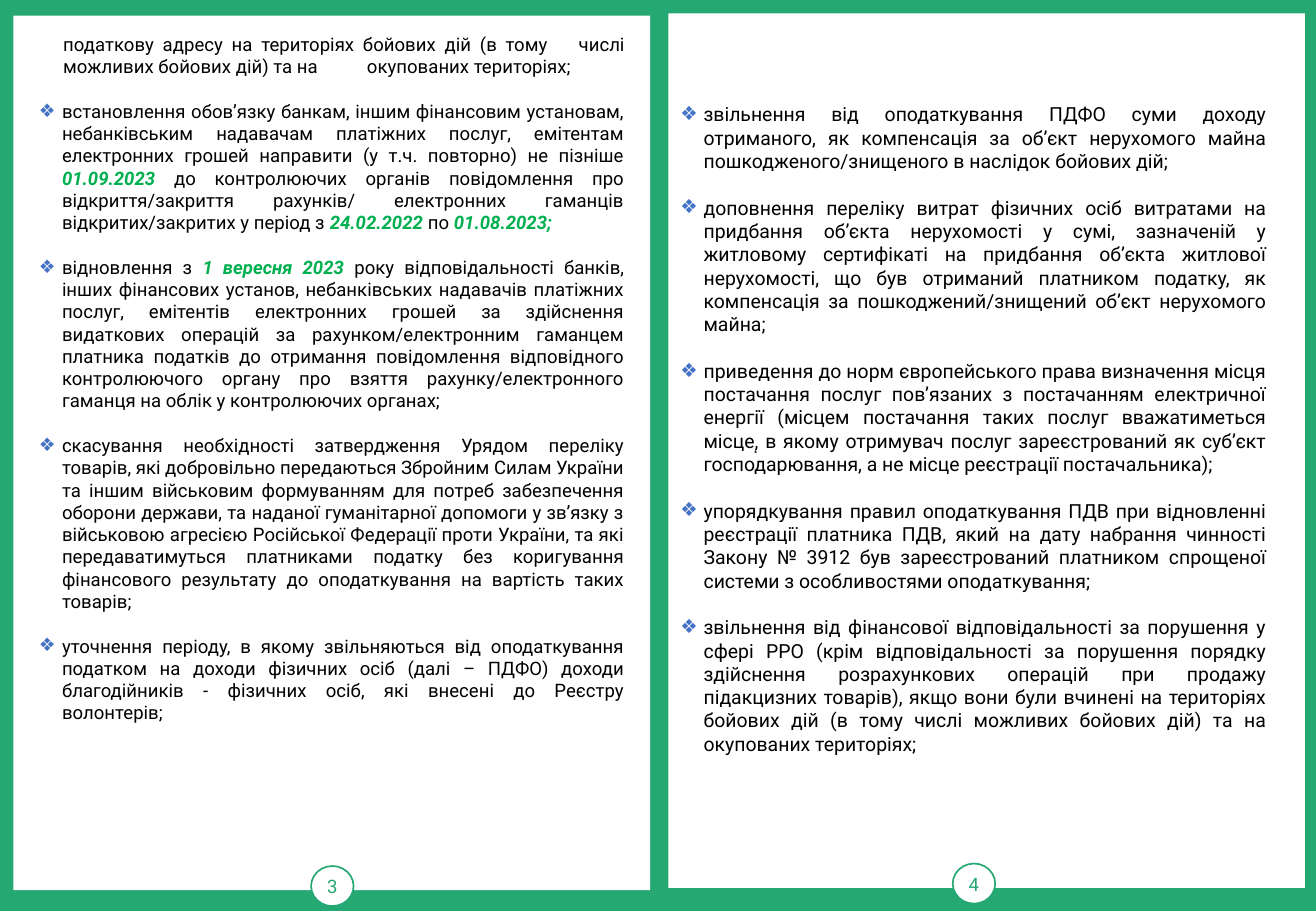
from lxml import etree
from pptx import Presentation
from pptx.dml.color import RGBColor
from pptx.enum.shapes import MSO_SHAPE
from pptx.enum.text import MSO_ANCHOR, MSO_AUTO_SIZE, PP_ALIGN
from pptx.oxml.ns import qn
from pptx.util import Inches, Pt

RECTANGLE, OVAL = MSO_SHAPE.RECTANGLE, MSO_SHAPE.OVAL
TOP, MIDDLE = MSO_ANCHOR.TOP, MSO_ANCHOR.MIDDLE
CENTER, JUSTIFY = PP_ALIGN.CENTER, PP_ALIGN.JUSTIFY
NO_AUTOFIT = MSO_AUTO_SIZE.NONE
GREEN = RGBColor(0x25, 0xA8, 0x72)
DATE_GREEN = RGBColor(0x00, 0xB0, 0x50)
BULLET_BLUE = RGBColor(0x44, 0x72, 0xC4)
WHITE = RGBColor(0xFF, 0xFF, 0xFF)
BLACK = RGBColor(0, 0, 0)
DARK_GREY = RGBColor(0x33, 0x33, 0x33)
FONT = "Roboto"

# Text between asterisks is a highlighted date
LEFT_CONTINUATION = (
    "податкову адресу на територіях бойових дій (в тому\tчислі "
    "можливих бойових дій) та на\tокупованих територіях;")
LEFT_ITEMS = [
    "встановлення обов’язку банкам, іншим фінансовим установам, небанківським "
    "надавачам платіжних послуг, емітентам електронних грошей направити (у т.ч. "
    "повторно) не пізніше *01.09.2023* до контролюючих органів повідомлення про "
    "відкриття/закриття рахунків/ електронних гаманців відкритих/закритих у період "
    "з *24.02.2022* по *01.08.2023;*",
    "відновлення з *1 вересня 2023* року відповідальності банків, інших фінансових "
    "установ, небанківських надавачів платіжних послуг, емітентів електронних грошей "
    "за здійснення видаткових операцій за рахунком/електронним гаманцем платника "
    "податків до отримання повідомлення відповідного контролюючого органу про взяття "
    "рахунку/електронного гаманця на облік у контролюючих органах;",
    "скасування необхідності затвердження Урядом переліку товарів, які добровільно "
    "передаються Збройним Силам України та іншим військовим формуванням для потреб "
    "забезпечення оборони держави, та наданої гуманітарної допомоги у зв’язку з "
    "військовою агресією Російської Федерації проти України, та які передаватимуться "
    "платниками податку без коригування фінансового результату до оподаткування на "
    "вартість таких товарів;",
    "уточнення періоду, в якому звільняються від оподаткування податком на доходи "
    "фізичних осіб (далі – ПДФО) доходи благодійників - фізичних осіб, які внесені "
    "до Реєстру волонтерів;",
]
RIGHT_ITEMS = [
    "звільнення від оподаткування ПДФО суми доходу отриманого, як компенсація за "
    "об’єкт нерухомого майна пошкодженого/знищеного в наслідок бойових дій;",
    "доповнення переліку витрат фізичних осіб витратами на придбання об’єкта "
    "нерухомості у сумі, зазначеній у житловому сертифікаті на придбання об’єкта "
    "житлової нерухомості, що був отриманий платником податку, як компенсація за "
    "пошкоджений/знищений об’єкт нерухомого майна;",
    "приведення до норм європейського права визначення місця постачання послуг "
    "пов’язаних з постачанням електричної енергії (місцем постачання таких послуг "
    "вважатиметься місце, в якому отримувач послуг зареєстрований як суб’єкт "
    "господарювання, а не місце реєстрації постачальника);",
    "упорядкування правил оподаткування ПДВ при відновленні реєстрації платника ПДВ, "
    "який на дату набрання чинності Закону № 3912 був зареєстрований платником "
    "спрощеної системи з особливостями оподаткування;",
    "звільнення від фінансової відповідальності за порушення у сфері РРО (крім "
    "відповідальності за порушення порядку здійснення розрахункових операцій при "
    "продажу підакцизних товарів), якщо вони були вчинені на територіях бойових дій "
    "(в тому числі можливих бойових дій) та на окупованих територіях;",
]


def set_format(target, values):
    """Set attributes from a dict; the colour goes to the font colour."""
    for name, value in values.items():
        if name == "color":
            target.color.rgb = value
        else:
            setattr(target, name, value)


def add_property(paragraph, tag, **attributes):
    """Append one element to the paragraph properties."""
    properties = paragraph._p.get_or_add_pPr()
    return etree.SubElement(properties, qn(tag), attributes)


presentation = Presentation()
presentation.slide_width = Inches(10.83)
presentation.slide_height = Inches(7.5)
slide = presentation.slides.add_slide(presentation.slide_layouts[3])
slide.background.fill.solid()
slide.background.fill.fore_color.rgb = GREEN

# The page has no title
title = slide.shapes.title
title._element.getparent().remove(title._element)
left_list, right_list = slide.placeholders

# White pages with numbered circles
for number, page_left, page_top, circle_left in [
        ("3", 0.11, 0.13, 2.56), ("4", 5.5, 0.11, 7.84)]:
    page = slide.shapes.add_shape(
        RECTANGLE, Inches(page_left), Inches(page_top), Inches(5.24), Inches(7.2))
    circle = slide.shapes.add_shape(
        OVAL, Inches(circle_left), Inches(page_top + 7), Inches(0.35), Inches(0.33))
    for shape in (page, circle):
        shape.shadow.inherit = False
        shape.fill.solid()
        shape.fill.fore_color.rgb = WHITE
    page.line.fill.background()
    circle.line.color.rgb = GREEN
    circle.line.width = Pt(1)
    set_format(circle.text_frame, {
        "margin_left": 0, "margin_right": 0, "margin_top": 0, "margin_bottom": 0,
        "vertical_anchor": MIDDLE, "word_wrap": False})
    paragraph = circle.text_frame.paragraphs[0]
    paragraph.text = number
    paragraph.alignment = CENTER
    set_format(paragraph.font, {"name": FONT, "size": Pt(11), "color": GREEN})

# Small dot on the right page
dot = slide.shapes.add_textbox(Inches(5.61), Inches(0.23), Inches(5.02), Inches(6.84))
set_format(dot.text_frame, {"word_wrap": True, "vertical_anchor": MIDDLE})
paragraph = dot.text_frame.paragraphs[0]
paragraph.text = "."
set_format(paragraph, {"alignment": JUSTIFY, "line_spacing": 1.15})
paragraph._p.get_or_add_pPr().set("indent", str(Inches(0.49)))
set_format(paragraph.font, {"name": FONT, "size": Pt(12), "color": DARK_GREY})

# Lists: placeholder, place, anchor, bottom margin, text size, gap, items
for placeholder, left, top, anchor, bottom_margin, size, gap, items in [
        (left_list, 0.22, 0.22, TOP, 0.05, 11, 13.2, [LEFT_CONTINUATION] + LEFT_ITEMS),
        (right_list, 5.5, 0.19, MIDDLE, 0.24, 11.5, 13.9, RIGHT_ITEMS)]:
    set_format(placeholder, {
        "left": Inches(left), "top": Inches(top),
        "width": Inches(5.02), "height": Inches(6.87)})
    slide.shapes._spTree.append(placeholder._element)
    frame = placeholder.text_frame
    set_format(frame, {
        "auto_size": NO_AUTOFIT, "word_wrap": True, "vertical_anchor": anchor,
        "margin_left": Inches(0.1), "margin_right": Inches(0.1),
        "margin_top": Inches(0.05), "margin_bottom": Inches(bottom_margin)})
    for index, item in enumerate(items):
        paragraph = frame.add_paragraph() if index else frame.paragraphs[0]
        set_format(paragraph, {
            "alignment": JUSTIFY, "space_after": Pt(0),
            "space_before": Pt(gap if index else 0)})
        properties = paragraph._p.get_or_add_pPr()
        if item == LEFT_CONTINUATION:
            properties.set("marL", str(Inches(0.2)))
            properties.set("indent", "0")
            add_property(paragraph, "a:buNone")
            tabs = add_property(paragraph, "a:tabLst")
            for position in (2.49, 4.2):
                etree.SubElement(tabs, qn("a:tab"), pos=str(Inches(position)), algn="l")
        else:
            properties.set("marL", str(Inches(0.19)))
            properties.set("indent", str(-Inches(0.19)))
            bullet_color = add_property(paragraph, "a:buClr")
            etree.SubElement(bullet_color, qn("a:srgbClr"), val=str(BULLET_BLUE))
            add_property(paragraph, "a:buFont", typeface=FONT)
            add_property(paragraph, "a:buChar", char="❖")
        set_format(paragraph.font, {"name": FONT, "size": Pt(size)})
        for part_index, part in enumerate(item.split("*")):
            if part:
                is_date = part_index % 2 == 1
                run = paragraph.add_run()
                run.text = part
                set_format(run.font, {
                    "name": FONT, "size": Pt(size), "bold": is_date, "italic": is_date,
                    "color": DATE_GREEN if is_date else BLACK})

presentation.save("out.pptx")
